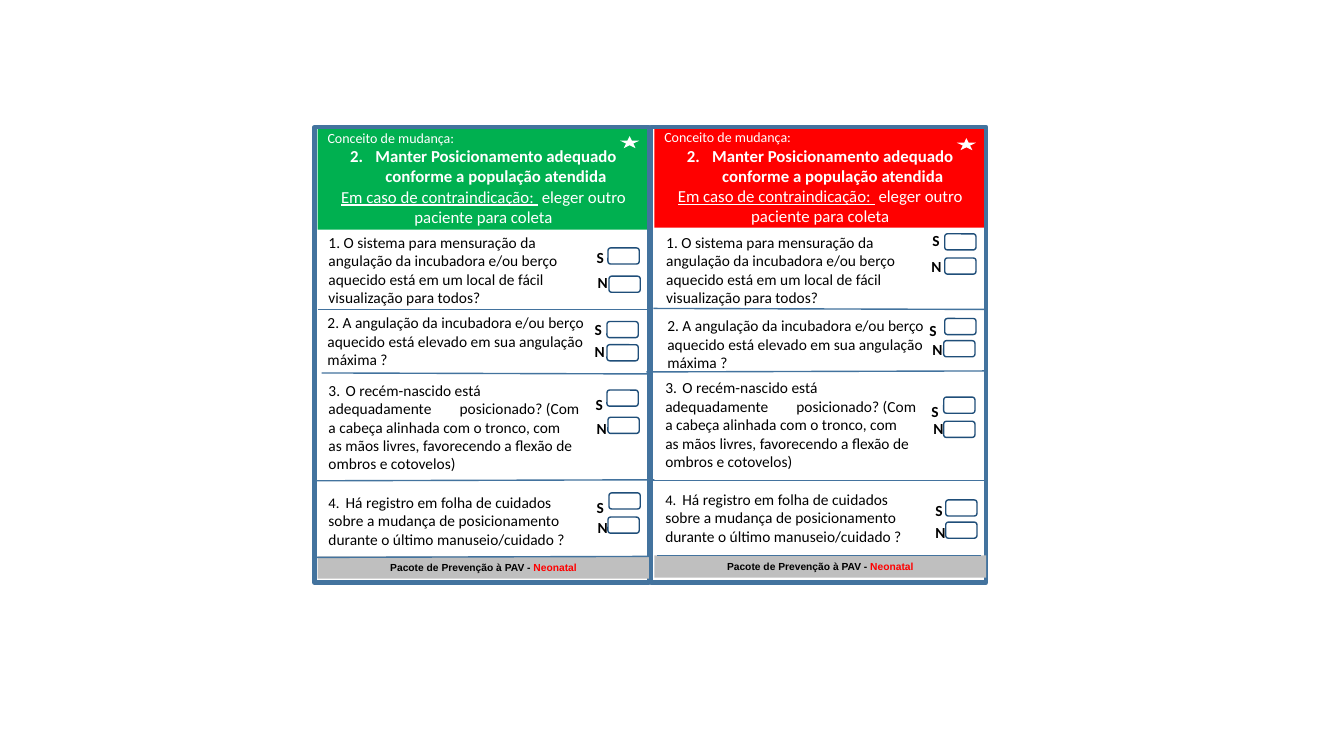
from dataclasses import dataclass

from lxml.etree import SubElement
from pptx import Presentation
from pptx.dml.color import RGBColor
from pptx.enum.shapes import MSO_CONNECTOR as Connector, MSO_SHAPE as Preset
from pptx.enum.text import MSO_ANCHOR as Anchor, PP_ALIGN as Align
from pptx.oxml.ns import qn
from pptx.util import Emu, Inches, Pt

CELL = Inches(0.01)  # the page is a grid of 1333 columns by 750 rows
COLUMNS, ROWS = 1333, 750


@dataclass(frozen=True)
class Theme:
    green: str = "00B050"
    red: str = "FF0000"
    white: str = "FFFFFF"
    black: str = "000000"
    gray: str = "BFBFBF"
    frame: str = "43739E"
    checkbox: str = "1F4E79"
    body_font: str = "Calibri"
    footer_font: str = "Arial"
    concept: float = 10
    title: float = 12
    question: float = 11
    number: float = 10.5
    footer: float = 7.3
    thick: float = 3
    thin: float = 1


THEME = Theme()


@dataclass(frozen=True)
class Area:
    column: int
    row: int
    width: int
    height: int

    def lengths(self) -> list[Emu]:
        return [Emu(n * CELL) for n in (self.column, self.row, self.width, self.height)]


@dataclass(frozen=True)
class Span:
    text: str
    size: float = THEME.question
    color: str = THEME.black
    bold: bool = False
    underline: bool = False
    font: str = THEME.body_font


@dataclass(frozen=True)
class Para:
    spans: tuple[Span, ...]
    align: Align = Align.LEFT
    start: int = 0  # first automatic number, 0 for none
    hanging: int = 0
    tabs: tuple[int, ...] = ()


@dataclass(frozen=True)
class Answer:
    letter: str
    label: tuple[int, int]
    checkbox: tuple[int, int]


@dataclass(frozen=True)
class Panel:
    color: str
    header: Area
    frame: Area
    star: Area
    footer: Area
    questions: tuple[Area, ...]
    answers: tuple[Answer, ...]
    dividers: tuple[tuple[int, int, int, int], ...]


HEADER = (
    Para((Span("Conceito de mudança:", THEME.concept, THEME.white),)),
    Para((Span("Manter Posicionamento adequado conforme a população atendida",
               THEME.title, THEME.white, bold=True),), Align.CENTER, start=2, hanging=25),
    Para((Span("Em caso de contraindicação: ", THEME.title, THEME.white, underline=True),
          Span(" eleger outro paciente para coleta", THEME.title, THEME.white)), Align.CENTER),
)
QUESTIONS = (
    Para((Span(" O sistema para mensuração da angulação da incubadora e/ou berço aquecido "
               "está em um local de fácil visualização para todos?"),), start=1),
    Para((Span("2. A angulação da incubadora e/ou berço aquecido está elevado em sua "
               "angulação máxima ?"),)),
    Para((Span("3.\tO recém-nascido está\nadequadamente\tposicionado? (Com a cabeça "
               "alinhada com o tronco, com\nas mãos livres, favorecendo a flexão de "
               "ombros e cotovelos)"),), tabs=(17, 130)),
    Para((Span("4.\t", THEME.number),
          Span("Há registro em folha de cuidados sobre a mudança de posicionamento "
               "durante o último manuseio/cuidado ?")), tabs=(17,)),
)
FOOTER = Para((Span("Pacote de Prevenção à PAV - ", THEME.footer, bold=True,
                    font=THEME.footer_font),
               Span("Neonatal", THEME.footer, THEME.red, True,
                    font=THEME.footer_font)), Align.CENTER)

PANELS = (
    Panel(THEME.green, Area(315, 125, 329, 103), Area(312, 126, 332, 452),
          Area(615, 135, 19, 12), Area(315, 552, 329, 22),
          (Area(316, 245, 277, 45), Area(315, 319, 277, 39),
           Area(316, 397, 274, 53), Area(316, 486, 274, 61)),
          (Answer("S", (582, 249), (603, 246)), Answer("N", (583, 274), (604, 274)),
           Answer("S", (580, 321), (602, 319)), Answer("N", (580, 343), (602, 342)),
           Answer("S", (581, 395), (602, 387)), Answer("N", (582, 419), (603, 414)),
           Answer("S", (582, 497), (604, 489)), Answer("N", (583, 517), (603, 513))),
          ((315, 307, 643, 307), (319, 370, 647, 371), (312, 477, 649, 476),
           (311, 553, 647, 552), (313, 577, 646, 578))),
    Panel(THEME.red, Area(649, 126, 329, 100), Area(646, 126, 332, 452),
          Area(949, 137, 19, 12), Area(649, 551, 329, 22),
          (Area(651, 245, 277, 45), Area(652, 322, 277, 39),
           Area(650, 395, 274, 53), Area(650, 483, 274, 61)),
          (Answer("S", (915, 232), (937, 232)), Answer("N", (914, 258), (937, 256)),
           Answer("S", (912, 322), (937, 316)), Answer("N", (915, 341), (936, 338)),
           Answer("S", (914, 402), (936, 394)), Answer("N", (916, 419), (936, 418)),
           Answer("S", (918, 500), (938, 496)), Answer("N", (918, 522), (938, 518))),
          ((648, 306, 976, 307), (641, 369, 977, 368), (644, 477, 980, 477),
           (652, 551, 973, 551))),
)


def rgb(color: str) -> RGBColor:
    return RGBColor.from_string(color)


def write_para(target, para: Para) -> None:
    target.alignment = para.align
    properties = target._p.get_or_add_pPr()
    if para.hanging:
        properties.set("marL", str(para.hanging * CELL))
        properties.set("indent", str(-para.hanging * CELL))
    if para.start:
        SubElement(properties, qn("a:buFont"), typeface="+mj-lt")
        SubElement(properties, qn("a:buAutoNum"), type="arabicPeriod", startAt=str(para.start))
    if para.tabs:
        stops = SubElement(properties, qn("a:tabLst"))
        for stop in para.tabs:
            SubElement(stops, qn("a:tab"), pos=str(stop * CELL), algn="l")
    for span in para.spans:
        for index, line in enumerate(span.text.split("\n")):
            if index:
                target.add_line_break()
            run = target.add_run()
            run.text = line
            font = run.font
            font.name, font.size = span.font, Pt(span.size)
            font.bold, font.underline = span.bold, span.underline
            font.color.rgb = rgb(span.color)


def write(box, *paras: Para) -> None:
    frame = box.text_frame
    frame.word_wrap = True
    frame.vertical_anchor = Anchor.MIDDLE
    for index, para in enumerate(paras):
        write_para(frame.add_paragraph() if index else frame.paragraphs[0], para)


def add_preset(page, preset: Preset, area: Area, fill: str = "",
               line: str = "", weight: float = THEME.thin):
    shape = page.shapes.add_shape(preset, *area.lengths())
    shape.shadow.inherit = False
    if fill:
        shape.fill.solid()
        shape.fill.fore_color.rgb = rgb(fill)
    else:
        shape.fill.background()
    if line:
        shape.line.color.rgb = rgb(line)
        shape.line.width = Pt(weight)
    else:
        shape.line.fill.background()
    return shape


def add_text(page, area: Area, para: Para) -> None:
    write(page.shapes.add_textbox(*area.lengths()), para)


def add_divider(page, ends: tuple[int, int, int, int]) -> None:
    line = page.shapes.add_connector(Connector.STRAIGHT, *(Emu(n * CELL) for n in ends))
    line.line.color.rgb = rgb(THEME.frame)
    line.line.width = Pt(THEME.thin)
    SubElement(line._element.spPr, qn("a:effectLst"))


def add_panel(page, panel: Panel) -> None:
    write(add_preset(page, Preset.RECTANGLE, panel.header, panel.color), *HEADER)
    add_preset(page, Preset.RECTANGLE, panel.frame, line=THEME.frame, weight=THEME.thick)
    add_preset(page, Preset.STAR_5_POINT, panel.star, THEME.white)
    write(add_preset(page, Preset.RECTANGLE, panel.footer, THEME.gray), FOOTER)
    for ends in panel.dividers:
        add_divider(page, ends)
    for area, question in zip(panel.questions, QUESTIONS):
        add_text(page, area, question)
    for answer in panel.answers:
        add_preset(page, Preset.ROUNDED_RECTANGLE, Area(*answer.checkbox, 31, 16),
                   line=THEME.checkbox)
        add_text(page, Area(*answer.label, 23, 12),
                 Para((Span(answer.letter, bold=True),), Align.CENTER))


def main() -> None:
    deck = Presentation()
    deck.slide_width, deck.slide_height = Emu(COLUMNS * CELL), Emu(ROWS * CELL)
    page = deck.slides.add_slide(deck.slide_layouts[6])
    for panel in PANELS:
        add_panel(page, panel)
    deck.save("out.pptx")


if __name__ == "__main__":
    main()
